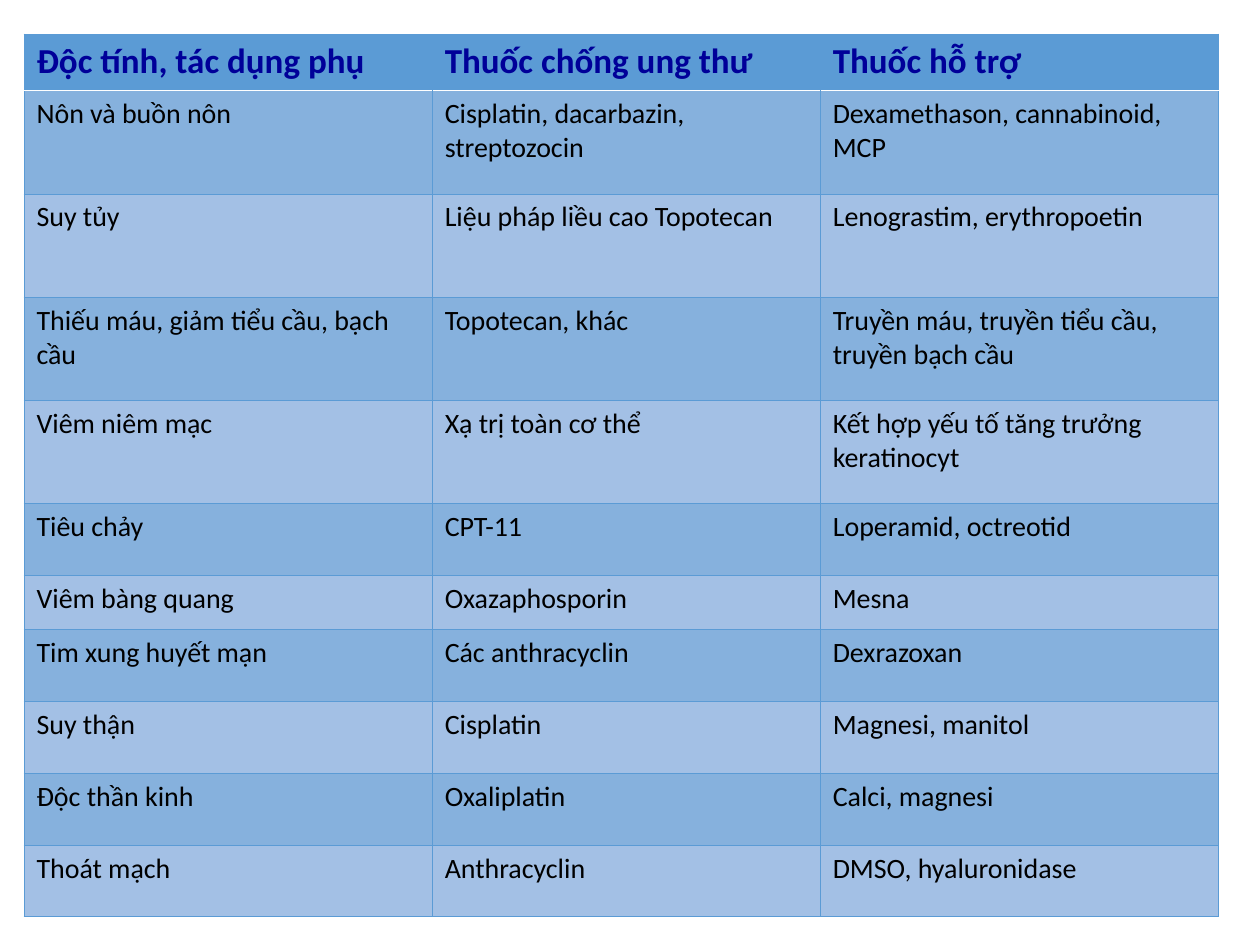
from pptx import Presentation
from pptx.dml.color import RGBColor as RGB
from pptx.oxml.ns import qn
from pptx.util import Inches, Pt
from lxml.etree import SubElement as Sub

HUES = {"head": "5B9BD5", "line": "5B9BD5", "rule": "FFFFFF", "odd": "86B1DD",
        "even": "A3C0E5", "title": "000099", "text": "000000"}
WIDE, HIGH = 10, 7.5
BOX = (0.19, 0.27, 9.48, 7.01)  # left, top, width, height
COLS = (3.24, 3.08, 3.16)
ROWS = (0.45, *[0.82] * 4, 0.57, 0.43, *[0.57] * 4)
DATA = [
    ("Độc tính, tác dụng phụ", "Thuốc chống ung thư", "Thuốc hỗ trợ"),
    ("Nôn và buồn nôn", "Cisplatin, dacarbazin, streptozocin", "Dexamethason, cannabinoid, MCP"),
    ("Suy tủy", "Liệu pháp liều cao Topotecan", "Lenograstim, erythropoetin"),
    ("Thiếu máu, giảm tiểu cầu, bạch cầu", "Topotecan, khác",
     "Truyền máu, truyền tiểu cầu, truyền bạch cầu"),
    ("Viêm niêm mạc", "Xạ trị toàn cơ thể", "Kết hợp yếu tố tăng trưởng keratinocyt"),
    ("Tiêu chảy", "CPT-11", "Loperamid, octreotid"),
    ("Viêm bàng quang", "Oxazaphosporin", "Mesna"),
    ("Tim xung huyết mạn", "Các anthracyclin", "Dexrazoxan"),
    ("Suy thận", "Cisplatin", "Magnesi, manitol"),
    ("Độc thần kinh", "Oxaliplatin", "Calci, magnesi"),
    ("Thoát mạch", "Anthracyclin", "DMSO, hyaluronidase"),
]


def write(frame, text, size=16, hue="text", bold=False):
    run = frame.paragraphs[0].add_run()
    run.text = text
    font = run.font
    font.name, font.size, font.bold = "Calibri", Pt(size), bold
    font.color.rgb = RGB.from_string(HUES[hue])


def edge(cell, side, hue, width=0.5):
    """Draw one cell border; a hue of None leaves it open."""
    props = cell._tc.get_or_add_tcPr()
    line = Sub(props, qn(f"a:ln{side}"), w=str(Pt(width)))
    if hue:
        Sub(Sub(line, qn("a:solidFill")), qn("a:srgbClr"), val=HUES[hue])
    else:
        Sub(line, qn("a:noFill"))


def frame_cell(cell, row, col):
    """Thin blue grid; the header has no inner uprights and a white rule below."""
    head, last = row == 0, len(COLS) - 1
    edge(cell, "L", None if head and col > 0 else "line")
    edge(cell, "R", None if head and col < last else "line")
    edge(cell, "T", *(("rule", 1) if row == 1 else ("line",)))
    edge(cell, "B", *(("rule", 1) if head else ("line",)))


def drug_table(slide, left, top, width, height):
    shape = slide.shapes.add_table(len(ROWS), len(COLS), Inches(left), Inches(top),
                                   Inches(width), Inches(height))
    table = shape.table
    table.horz_banding = False
    # Columns and rows as shares of the box
    for col, part in zip(table.columns, COLS):
        col.width = Inches(width * part / sum(COLS))
    for row, part in zip(table.rows, ROWS):
        row.height = Inches(height * part / sum(ROWS))
    # Cells: header, then two alternating bands
    for r, words in enumerate(DATA):
        band = "head" if r == 0 else "odd" if r % 2 else "even"
        style = {"size": 20, "hue": "title", "bold": True} if r == 0 else {}
        for c, text in enumerate(words):
            cell = table.cell(r, c)
            frame_cell(cell, r, c)
            cell.fill.solid()
            cell.fill.fore_color.rgb = RGB.from_string(HUES[band])
            write(cell.text_frame, text, **style)


def main():
    deck = Presentation()
    deck.slide_width, deck.slide_height = Inches(WIDE), Inches(HIGH)
    slide = deck.slides.add_slide(deck.slide_layouts[6])
    drug_table(slide, *BOX)
    deck.save("out.pptx")


if __name__ == "__main__":
    main()
